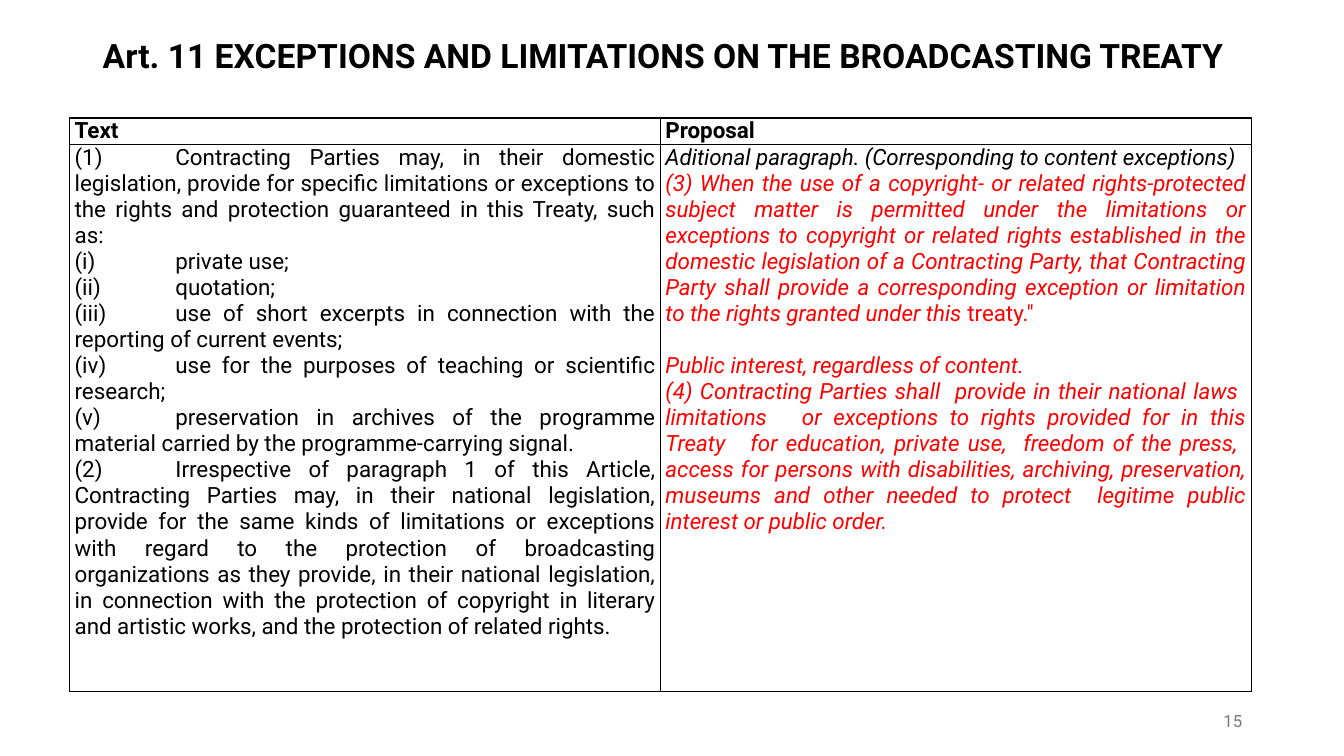
import pptx
import pptx.util
import pptx.dml.color
import pptx.enum.text
import pptx.oxml
import pptx.oxml.ns

Inches, Pt = pptx.util.Inches, pptx.util.Pt
ALIGN = pptx.enum.text.PP_ALIGN
ANCHOR = pptx.enum.text.MSO_ANCHOR
NS = pptx.oxml.ns.nsdecls("a")

FONT = "Roboto"
BLACK, RED, GREY = "000000", "FF0000", "797979"
BODY_SIZE = 16
LINE_HEIGHT = 18.5

TITLE = "Art. 11 EXCEPTIONS AND LIMITATIONS ON THE BROADCASTING TREATY"
TREATY_TEXT = [
    "(1)\tContracting Parties may, in their domestic legislation, provide for specific "
    "limitations or exceptions to the rights and protection guaranteed in this Treaty, such as:",
    "(i)\tprivate use;",
    "(ii)\tquotation;",
    "(iii)\tuse of short excerpts in connection with the reporting of current events;",
    "(iv)\tuse for the purposes of teaching or scientific research;",
    "(v)\tpreservation in archives of the programme material carried by the "
    "programme-carrying signal.",
    "(2)\tIrrespective of paragraph 1 of this Article, Contracting Parties may, in their "
    "national legislation, provide for the same kinds of limitations or exceptions with regard "
    "to the protection of broadcasting organizations as they provide, in their national "
    "legislation, in connection with the protection of copyright in literary and artistic "
    "works, and the protection of related rights.",
]
ADDITIONAL = "Aditional paragraph. (Corresponding to content exceptions)"
PARAGRAPH_3 = (
    "(3) When the use of a copyright- or related rights-protected subject matter is permitted "
    "under the limitations or exceptions to copyright or related rights established in the "
    "domestic legislation of a Contracting Party, that Contracting Party shall provide a "
    "corresponding exception or limitation to the rights granted under this"
)
PUBLIC_INTEREST = "Public interest, regardless of content."
PARAGRAPH_4 = (
    "(4) Contracting Parties shall  provide in their national laws  limitations   or exceptions "
    "to rights provided for in this Treaty   for education, private use,  freedom of the press,  "
    "access for persons with disabilities, archiving, preservation, museums and other needed to "
    "protect  legitime public interest or public order."
)


def rgb(color):
    return pptx.dml.color.RGBColor.from_string(color)


def write(p, text, size=BODY_SIZE, color=BLACK, bold=False, italic=False, align=ALIGN.LEFT):
    p.text = text
    p.alignment = align
    p.font.name = FONT
    p.font.size = Pt(size)
    p.font.bold = bold
    p.font.italic = italic
    p.font.color.rgb = rgb(color)


def add_text(slide, box, text, **style):
    tf = slide.shapes.add_textbox(*map(Inches, box)).text_frame
    tf.word_wrap = True
    tf.vertical_anchor = ANCHOR.MIDDLE
    write(tf.paragraphs[0], text, **style)
    return tf.paragraphs[0]


def add_tab_stop(p, position):
    p._p.get_or_add_pPr().append(pptx.oxml.parse_xml(
        f'<a:tabLst {NS}><a:tab pos="{Inches(position)}" algn="l"/></a:tabLst>'))


def format_cell(cell):
    """Give a cell tight margins, no fill and a thin black border on all sides."""
    cell.margin_left = cell.margin_right = Inches(0.05)
    cell.margin_top = cell.margin_bottom = 0
    tc_pr = cell._tc.get_or_add_tcPr()
    for side in "LRTB":
        tc_pr.append(pptx.oxml.parse_xml(
            f'<a:ln{side} {NS} w="{Pt(1)}"><a:solidFill>'
            f'<a:srgbClr val="{BLACK}"/></a:solidFill></a:ln{side}>'))
    cell.fill.background()


def write_body(cell, entries):
    """Write justified paragraphs from (text, style) pairs."""
    tf = cell.text_frame
    for i, (text, style) in enumerate(entries):
        p = tf.add_paragraph() if i else tf.paragraphs[0]
        if "\t" in text:
            add_tab_stop(p, 1)
        write(p, text, align=ALIGN.JUSTIFY, **style)
    return tf.paragraphs


def add_comparison(slide):
    box = map(Inches, (0.69, 1.17, 11.72, 5.67))
    table = slide.shapes.add_table(2, 2, *box).table
    table.first_row = table.horz_banding = False
    for row, height in zip(table.rows, (0.25, 5.42)):
        row.height = Inches(height)
    for column in table.columns:
        column.width = Inches(5.86)
    for cell in table.iter_cells():
        format_cell(cell)
    for i, heading in enumerate(("Text", "Proposal")):
        write(table.cell(0, i).text_frame.paragraphs[0], heading, bold=True)

    write_body(table.cell(1, 0), [(text, {}) for text in TREATY_TEXT])
    proposed = {"color": RED, "italic": True}
    paragraphs = write_body(table.cell(1, 1), [
        (ADDITIONAL, {"italic": True}),
        (PARAGRAPH_3, proposed),
        (PUBLIC_INTEREST, proposed),
        (PARAGRAPH_4, proposed),
    ])
    r = paragraphs[1].add_run()
    r.text = ' treaty."'
    r.font.italic = False
    paragraphs[2].space_before = Pt(LINE_HEIGHT)


def main():
    prs = pptx.Presentation()
    prs.slide_width, prs.slide_height = Inches(13.33), Inches(7.5)
    slide = prs.slides.add_slide(prs.slide_layouts[6])
    title = add_text(slide, (0.92, 0.4, 11.5, 0.35), TITLE, size=24, bold=True)
    title.line_spacing = 0.9
    add_comparison(slide)
    add_text(slide, (9.42, 6.95, 3, 0.4), "15", size=12, color=GREY, align=ALIGN.RIGHT)
    prs.save("out.pptx")


if __name__ == "__main__":
    main()
